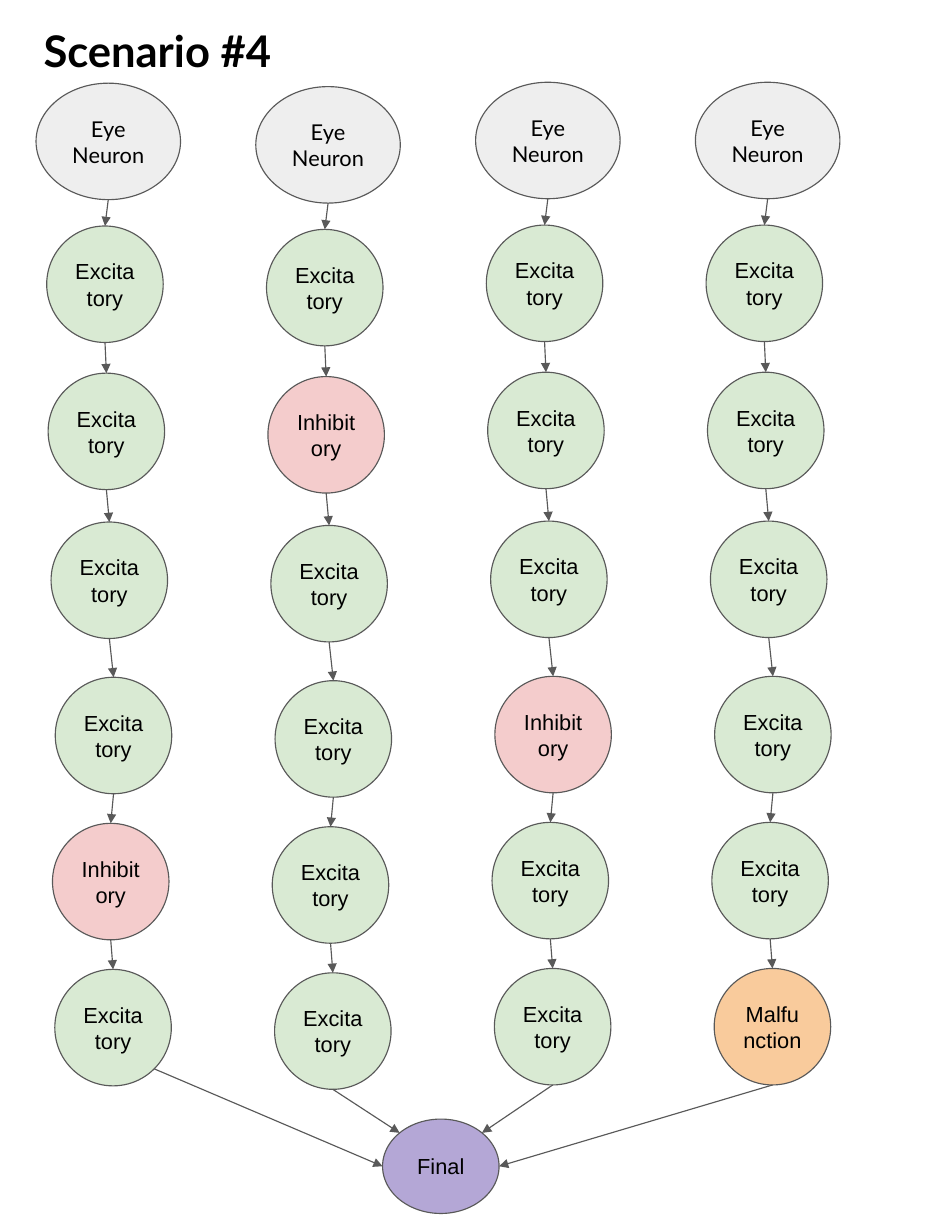
from dataclasses import dataclass
from itertools import pairwise
from math import cos, radians, sin

from lxml.etree import SubElement
from pptx import Presentation
from pptx.dml.color import RGBColor
from pptx.enum.shapes import MSO_CONNECTOR, MSO_SHAPE
from pptx.enum.text import MSO_ANCHOR, PP_ALIGN
from pptx.oxml.ns import qn
from pptx.util import Pt


@dataclass(frozen=True)
class Theme:
    text: str = "000000"
    outline: str = "595959"
    eye: str = "EEEEEE"
    excitatory: str = "D9EAD3"
    inhibitory: str = "F4CCCC"
    malfunction: str = "F9CB9C"
    final: str = "B4A7D6"
    heading_font: str = "Lato"
    body_font: str = "Arial"
    title_size: float = 28
    body_size: float = 14
    line_width: float = 0.75


THEME = Theme()
TOP, TOP_LEFT, LEFT, BOTTOM, BOTTOM_RIGHT, RIGHT, TOP_RIGHT = 0, 1, 2, 4, 5, 6, 7

DIAMETER = 74.9
EYE_WIDTH = 92.9
EYE_CENTER, EYE_TOP = 69.6, 53.5
COLUMN_STEP = 141.3
COLUMN_DROPS = [0, 2.2, -0.6, -0.6]
CELL_CENTERS = [67.5, 68.4, 70.3, 73, 71.2, 72.7]
CELL_TOPS = [145.3, 239.9, 335.6, 435.4, 529.3, 623.2]

FILLS = {
    "Excitatory": THEME.excitatory,
    "Inhibitory": THEME.inhibitory,
    "Malfunction": THEME.malfunction,
}
EXCEPTIONS = [
    {4: "Inhibitory"},
    {1: "Inhibitory"},
    {3: "Inhibitory"},
    {5: "Malfunction"},
]
FINAL_LINKS = [(BOTTOM_RIGHT, LEFT), (BOTTOM, TOP_LEFT), (BOTTOM, TOP_RIGHT), (BOTTOM, RIGHT)]


def set_text(text_frame, text, font_name, size, bold=False):
    text_frame.word_wrap = True
    text_frame.text = text
    font = text_frame.paragraphs[0].runs[0].font
    font.name = font_name
    font.size = Pt(size)
    font.bold = bold
    font.color.rgb = RGBColor.from_string(THEME.text)


def style_line(line):
    line.color.rgb = RGBColor.from_string(THEME.outline)
    line.width = Pt(THEME.line_width)


def add_title(slide, text):
    box = slide.shapes.add_textbox(Pt(20.9), Pt(7.9), Pt(570.2), Pt(49))
    text_frame = box.text_frame
    text_frame.margin_left = text_frame.margin_right = Pt(7.2)
    text_frame.margin_top = text_frame.margin_bottom = Pt(7.2)
    set_text(text_frame, text, THEME.heading_font, THEME.title_size, bold=True)


def add_neuron(slide, text, center, top, width, height, fill, font_name=THEME.body_font):
    shape = slide.shapes.add_shape(
        MSO_SHAPE.OVAL, Pt(center - width / 2), Pt(top), Pt(width), Pt(height)
    )
    shape.shadow.inherit = False
    shape.fill.solid()
    shape.fill.fore_color.rgb = RGBColor.from_string(fill)
    style_line(shape.line)
    text_frame = shape.text_frame
    text_frame.margin_left = text_frame.margin_right = Pt(7.2)
    text_frame.margin_top = text_frame.margin_bottom = Pt(7.2)
    text_frame.vertical_anchor = MSO_ANCHOR.MIDDLE
    set_text(text_frame, text, font_name, THEME.body_size)
    text_frame.paragraphs[0].alignment = PP_ALIGN.CENTER
    return shape


def site_position(shape, site):
    angle = radians(90 + 45 * site)
    x = shape.left + shape.width / 2 * (1 + cos(angle))
    y = shape.top + shape.height / 2 * (1 - sin(angle))
    return round(x), round(y)


def add_arrow(slide, source, target, source_site=BOTTOM, target_site=TOP):
    connector = slide.shapes.add_connector(
        MSO_CONNECTOR.STRAIGHT,
        *site_position(source, source_site),
        *site_position(target, target_site),
    )
    style_line(connector.line)
    SubElement(connector.line._get_or_add_ln(), qn("a:tailEnd"), type="triangle")
    SubElement(connector._element.spPr, qn("a:effectLst"))
    properties = connector._element.xpath("./p:nvCxnSpPr/p:cNvCxnSpPr")[0]
    for tag, shape, site in (
        ("a:stCxn", source, source_site),
        ("a:endCxn", target, target_site),
    ):
        SubElement(properties, qn(tag), id=str(shape.shape_id), idx=str(site))


def add_chain(slide, column, exceptions):
    shift, drop = column * COLUMN_STEP, COLUMN_DROPS[column]
    chain = [
        add_neuron(slide, "Eye Neuron", EYE_CENTER + shift, EYE_TOP + drop,
                   EYE_WIDTH, DIAMETER, THEME.eye, THEME.heading_font)
    ]
    for row, (center, top) in enumerate(zip(CELL_CENTERS, CELL_TOPS)):
        kind = exceptions.get(row, "Excitatory")
        chain.append(
            add_neuron(slide, kind, center + shift, top + drop,
                       DIAMETER, DIAMETER, FILLS[kind])
        )
    for source, target in pairwise(chain):
        add_arrow(slide, source, target)
    return chain[-1]


def main():
    presentation = Presentation()
    presentation.slide_width = Pt(612)
    presentation.slide_height = Pt(792)
    slide = presentation.slides.add_slide(presentation.slide_layouts[6])

    add_title(slide, "Scenario #4")
    final = add_neuron(slide, "Final", 283.4, 719.4, DIAMETER, 60.7, THEME.final)
    for column, exceptions in enumerate(EXCEPTIONS):
        last_neuron = add_chain(slide, column, exceptions)
        add_arrow(slide, last_neuron, final, *FINAL_LINKS[column])

    presentation.save("out.pptx")


if __name__ == "__main__":
    main()
